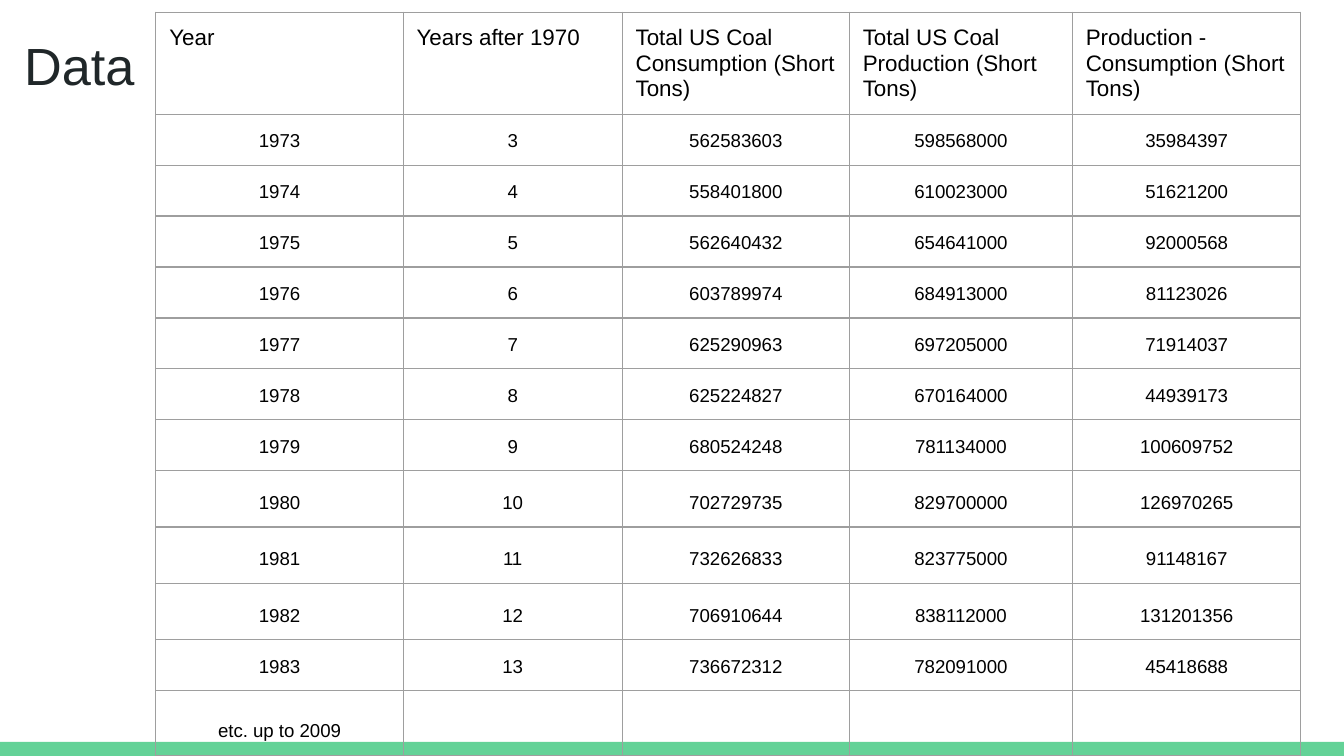
from dataclasses import dataclass

from lxml.etree import SubElement
from pptx import Presentation
from pptx.dml.color import RGBColor
from pptx.enum.shapes import MSO_SHAPE as Shape
from pptx.enum.text import MSO_ANCHOR as Anchor, MSO_AUTO_SIZE as Fit, PP_ALIGN as Align
from pptx.oxml.ns import qn
from pptx.util import Inches, Pt

WIDE = 10
HIGH = WIDE * 9 / 16
FONT = "Arial"
GREEN, GRAY, DARK, BLACK = "63D297", "9E9E9E", "202729", "000000"

COLS = [1.84, 1.63, 1.69, 1.66, 1.7]
ROWS = [0.76] + [0.37] * 7 + [0.42] * 3 + [0.37, 0.48]
HEADS = [
    "Year",
    "Years after 1970",
    "Total US Coal Consumption (Short Tons)",
    "Total US Coal Production (Short Tons)",
    "Production - Consumption (Short Tons)",
]
BASE, FIRST = 1970, 1973


@dataclass
class Coal:
    used: int
    made: int

    def cells(self, year: int) -> list[str]:
        return [str(n) for n in (year, year - BASE, self.used, self.made, self.made - self.used)]


DATA = [
    Coal(562583603, 598568000),
    Coal(558401800, 610023000),
    Coal(562640432, 654641000),
    Coal(603789974, 684913000),
    Coal(625290963, 697205000),
    Coal(625224827, 670164000),
    Coal(680524248, 781134000),
    Coal(702729735, 829700000),
    Coal(732626833, 823775000),
    Coal(706910644, 838112000),
    Coal(736672312, 782091000),
]


def color(code: str) -> RGBColor:
    return RGBColor.from_string(code)


def write(frame, text: str, size: float, ink: str = BLACK, align=Align.LEFT, space: float = 1.0) -> None:
    para = frame.paragraphs[0]
    para.alignment, para.line_spacing = align, space
    run = para.add_run()
    run.text = text
    run.font.size, run.font.name = Pt(size), FONT
    run.font.color.rgb = color(ink)


def pad(item, side: float, ends: float) -> None:
    item.margin_left = item.margin_right = Inches(side)
    item.margin_top = item.margin_bottom = Inches(ends)


def border(cell, code: str, width: float) -> None:
    props = cell._tc.get_or_add_tcPr()
    for spot, side in enumerate(("lnL", "lnR", "lnT", "lnB")):
        line = props.makeelement(qn(f"a:{side}"), {"w": str(Pt(width))})
        fill = SubElement(line, qn("a:solidFill"))
        SubElement(fill, qn("a:srgbClr"), val=code)
        props.insert(spot, line)


def add_bar(slide) -> None:
    top = 5.52
    bar = slide.shapes.add_shape(
        Shape.RECTANGLE, 0, Inches(top), Inches(WIDE), Inches(HIGH - top))
    bar.shadow.inherit = False
    bar.fill.solid()
    bar.fill.fore_color.rgb = color(GREEN)
    bar.line.fill.background()


def add_title(slide, text: str) -> None:
    title = slide.shapes.title
    title.left, title.top, title.width, title.height = map(Inches, (0.08, 0.15, 9.32, 0.63))
    frame = title.text_frame
    frame.auto_size, frame.vertical_anchor = Fit.NONE, Anchor.TOP
    pad(frame, 0.1, 0.1)
    write(frame, text, 28, DARK)


def add_grid(slide, rows: list[list[str]]) -> None:
    grid = slide.shapes.add_table(
        len(ROWS), len(COLS), Inches(1.16), Inches(0.09),
        Inches(sum(COLS)), Inches(sum(ROWS))).table
    grid.first_row = grid.horz_banding = False
    for col, width in zip(grid.columns, COLS):
        col.width = Inches(width)
    for row, height in zip(grid.rows, ROWS):
        row.height = Inches(height)
    for r, row in enumerate(rows):
        for c, text in enumerate(row):
            cell = grid.cell(r, c)
            cell.fill.background()
            border(cell, GRAY, 0.75)
            if r == 0:
                pad(cell, 0.1, 0.1)
                write(cell.text_frame, text, 12)
            elif text:
                pad(cell, 0.03, 0.1)
                cell.vertical_anchor = Anchor.BOTTOM
                write(cell.text_frame, text, 10, align=Align.CENTER, space=1.15)


def main() -> None:
    deck = Presentation()
    deck.slide_width, deck.slide_height = Inches(WIDE), Inches(HIGH)
    slide = deck.slides.add_slide(deck.slide_layouts[5])
    slide.background.fill.solid()
    slide.background.fill.fore_color.rgb = color("FFFFFF")
    add_bar(slide)
    add_title(slide, "Data")
    body = [coal.cells(year) for year, coal in enumerate(DATA, FIRST)]
    last = ["etc. up to 2009"] + [""] * (len(COLS) - 1)
    add_grid(slide, [HEADS, *body, last])
    deck.save("out.pptx")


if __name__ == "__main__":
    main()
